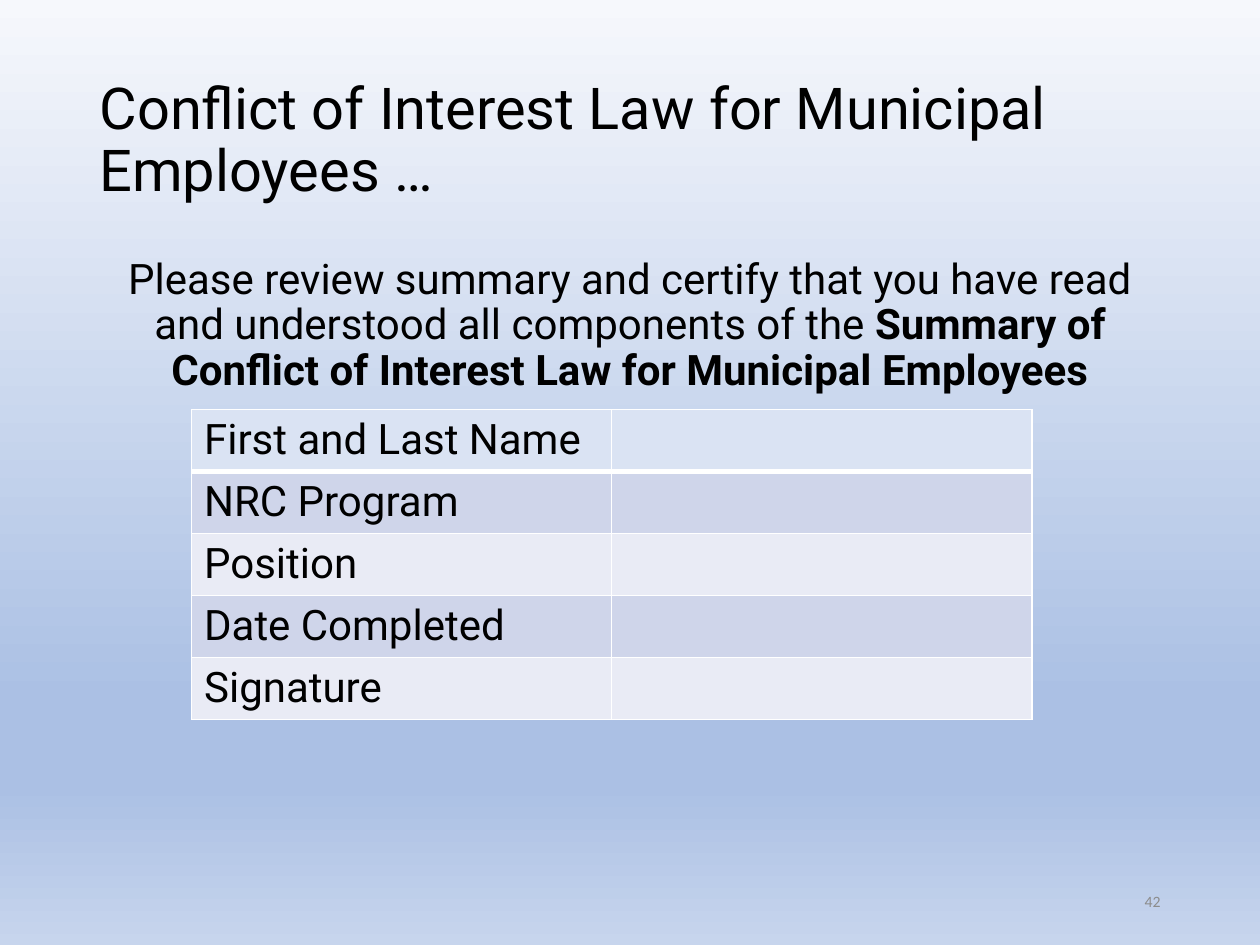
from dataclasses import dataclass

from lxml.etree import SubElement
from pptx import Presentation
from pptx.dml.color import RGBColor
from pptx.enum.text import MSO_ANCHOR, MSO_AUTO_SIZE, PP_ALIGN
from pptx.oxml import parse_xml
from pptx.oxml.ns import nsdecls, qn
from pptx.util import Inches, Pt


@dataclass
class TableRow:
    label: str
    fill: str
    top_border: float = 1
    bottom_border: float = 1


ROWS = [
    TableRow("First and Last Name", "DAE3F3", bottom_border=3),
    TableRow("NRC Program", "CFD5EA", top_border=3),
    TableRow("Position", "E9EBF5"),
    TableRow("Date Completed", "CFD5EA"),
    TableRow("Signature", "E9EBF5"),
]
BACKGROUND_STOPS = [(0, "F6F8FC"), (74, "ABC0E4"), (83, "ABC0E4"), (100, "C7D5ED")]


def color(value: str) -> RGBColor:
    return RGBColor.from_string(value)


def add_run(paragraph, text: str, size: float, font: str = "Roboto",
            fill: str = "000000", bold: bool = False) -> None:
    run = paragraph.add_run()
    run.text = text
    run.font.size = Pt(size)
    run.font.name = font
    run.font.bold = bold
    run.font.color.rgb = color(fill)


def place(shape, left: float, top: float, width: float, height: float, anchor):
    """Position a text shape and return its first paragraph."""
    shape.left, shape.top = Inches(left), Inches(top)
    shape.width, shape.height = Inches(width), Inches(height)
    frame = shape.text_frame
    frame.word_wrap = True
    frame.auto_size = MSO_AUTO_SIZE.NONE
    frame.vertical_anchor = anchor
    return frame.paragraphs[0]


def set_background(slide) -> None:
    slide.background.fill.solid()
    solid = next(slide.element.iter(qn("a:solidFill")))
    stops = "".join(
        f'<a:gs pos="{position * 1000}"><a:srgbClr val="{value}"/></a:gs>'
        for position, value in BACKGROUND_STOPS)
    gradient = parse_xml(
        f'<a:gradFill {nsdecls("a")} rotWithShape="1"><a:gsLst>{stops}</a:gsLst>'
        '<a:lin ang="5400000" scaled="0"/></a:gradFill>')
    solid.getparent().replace(solid, gradient)


def style_cell(cell, row: TableRow) -> None:
    properties = cell._tc.get_or_add_tcPr()
    borders = {"a:lnL": 1, "a:lnR": 1, "a:lnT": row.top_border, "a:lnB": row.bottom_border}
    for tag, width in borders.items():
        line = SubElement(properties, qn(tag), w=str(Pt(width)))
        fill = SubElement(line, qn("a:solidFill"))
        SubElement(fill, qn("a:srgbClr"), val="FFFFFF")
    cell.fill.solid()
    cell.fill.fore_color.rgb = color(row.fill)


def add_form_table(slide) -> None:
    row_height = 0.49
    table = slide.shapes.add_table(
        len(ROWS), 2, Inches(1.52), Inches(3.25),
        Inches(6.67), Inches(row_height * len(ROWS))).table
    for index, row in enumerate(ROWS):
        table.rows[index].height = Inches(row_height)
        for cell in table.rows[index].cells:
            style_cell(cell, row)
        add_run(table.cell(index, 0).text_frame.paragraphs[0], row.label, 24)


def main() -> None:
    presentation = Presentation()
    presentation.slide_width, presentation.slide_height = Inches(10), Inches(7.5)
    slide = presentation.slides.add_slide(presentation.slide_layouts[1])
    set_background(slide)

    # Title
    title = place(slide.shapes.title, 0.69, 0.4, 8.62, 1.45, MSO_ANCHOR.MIDDLE)
    title.alignment = PP_ALIGN.LEFT
    title.line_spacing = 0.9
    add_run(title, "Conflict of Interest Law for Municipal Employees …", 33)

    # Instruction, without a bullet
    body = place(slide.placeholders[1], 0.69, 2, 8.62, 4.76, MSO_ANCHOR.TOP)
    body.alignment = PP_ALIGN.CENTER
    body.line_spacing = 0.9
    body.space_before = Pt(7.5)
    properties = body._p.get_or_add_pPr()
    properties.set("marL", "0")
    properties.set("indent", "0")
    SubElement(properties, qn("a:buNone"))
    add_run(body, "Please review summary and certify that you have read and "
                  "understood all components of the ", 24)
    add_run(body, "Summary of Conflict of Interest Law for Municipal Employees", 24, bold=True)

    # Slide number
    number_box = slide.shapes.add_textbox(0, 0, 0, 0)
    number = place(number_box, 7.06, 6.95, 2.25, 0.4, MSO_ANCHOR.MIDDLE)
    number.alignment = PP_ALIGN.RIGHT
    add_run(number, "42", 9, "Calibri", "8C8C8C")

    # Certification form
    add_form_table(slide)

    presentation.save("out.pptx")


if __name__ == "__main__":
    main()
